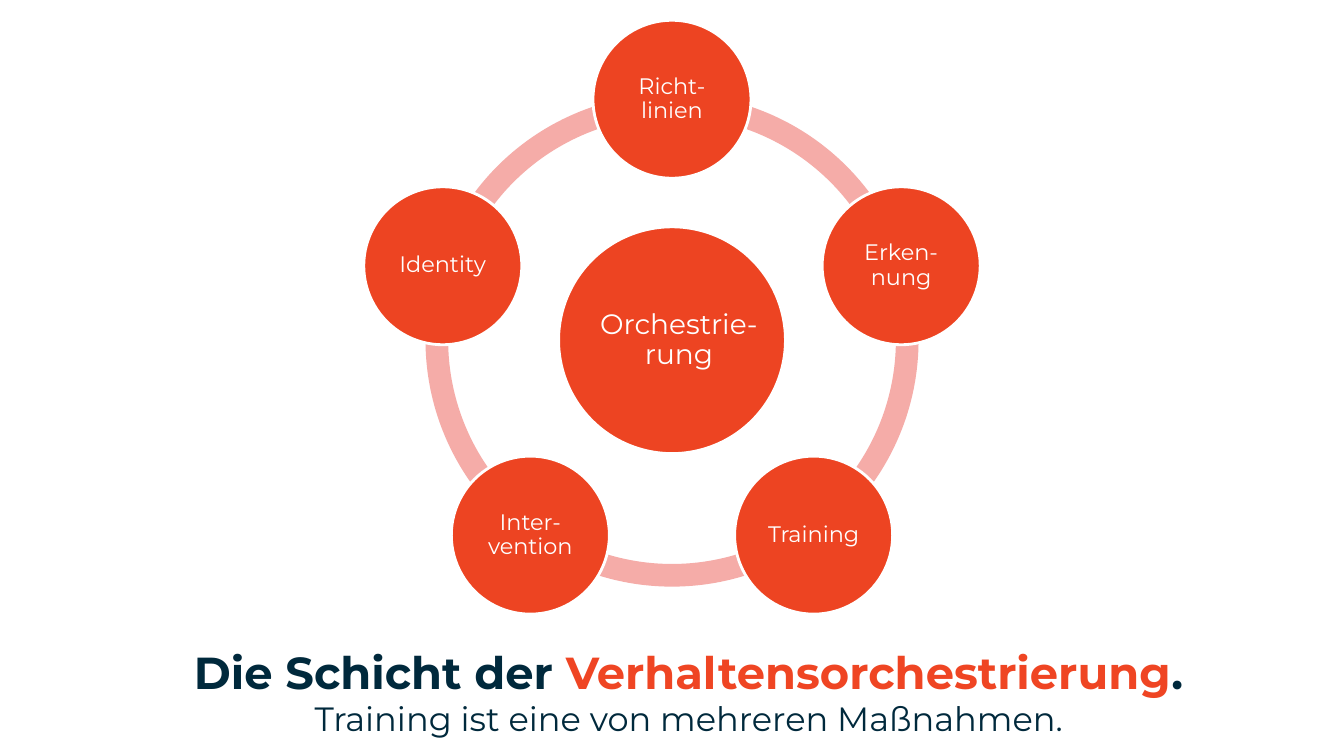
"""Build the slide showing five measures in a ring around orchestration."""
from dataclasses import dataclass
from math import cos, radians, sin

from pptx import Presentation
from pptx.dml.color import RGBColor
from pptx.enum.shapes import MSO_SHAPE
from pptx.enum.text import MSO_ANCHOR, PP_ALIGN
from pptx.util import Inches, Pt

ARC, DISC = MSO_SHAPE.BLOCK_ARC, MSO_SHAPE.OVAL
MID, CENTER = MSO_ANCHOR.MIDDLE, PP_ALIGN.CENTER
WIDE, HIGH = Inches(13.33), Inches(7.5)
FONT = "Montserrat"
HEX = {"navy": "00293C", "accent": "EF4523", "disc": "ED4422",
       "ring": "F5ACA8", "white": "FFFFFF"}
HUB_Y, ORBIT, RING, BAND = 45, 31.87, 65.2, 0.046
NAMES = [["Richt-", "linien"], ["Erken-", "nung"], ["Training"],
         ["Inter-", "vention"], ["Identity"]]
STEP = 360 / len(NAMES)


@dataclass
class Run:
    """A piece of text with its look."""
    text: str
    size: float
    color: str
    bold: bool = False


@dataclass
class Node:
    """A labelled disc; lengths are percent of the slide height from the hub."""
    lines: list[str]
    size: float
    font: float
    label: tuple[float, float]
    x: float = 0
    y: float = 0
    shift: float = 0
    inset: float = 0


def part(share: float) -> int:
    """Turn a percentage of the slide height into a length."""
    return round(HIGH * share / 100)


def frame(x: float, y: float, wide: float, high: float) -> tuple[int, ...]:
    """Give the box centred at an offset from the hub."""
    return (WIDE // 2 + part(x - wide / 2), part(HUB_Y + y - high / 2),
            part(wide), part(high))


def color(name: str) -> RGBColor:
    """Look up a named colour."""
    return RGBColor.from_string(HEX[name])


def write(slide, box: tuple[int, ...], rows: list[list[Run]],
          inset: float = 0, space: float = 1, indent: float = 0) -> None:
    """Draw centred paragraphs run by run in a text box."""
    text = slide.shapes.add_textbox(*box).text_frame
    text.word_wrap, text.vertical_anchor = True, MID
    text.margin_left = text.margin_right = Inches(inset)
    text.margin_top = text.margin_bottom = Inches(inset)
    for i, row in enumerate(rows):
        para = text.add_paragraph() if i else text.paragraphs[0]
        para.alignment, para.line_spacing = CENTER, space
        if indent:
            props = para._p.get_or_add_pPr()
            props.set("marL", str(Inches(2 * indent)))
            props.set("indent", str(-Inches(indent)))
        for item in row:
            run = para.add_run()
            run.text = item.text
            run.font.name, run.font.size = FONT, Pt(item.size)
            run.font.bold = item.bold
            run.font.color.rgb = color(item.color)


def shape(slide, kind: MSO_SHAPE, box: tuple[int, ...], fill: str):
    """Draw a flat shape without an outline."""
    item = slide.shapes.add_shape(kind, *box)
    item.shadow.inherit = False
    item.fill.solid()
    item.fill.fore_color.rgb = color(fill)
    item.line.fill.background()
    return item


def arc(slide, start: float) -> None:
    """Draw one ring segment, clockwise from an angle in degrees."""
    item = shape(slide, ARC, frame(0, 0, RING, RING), "ring")
    ends = start % 360, (start + STEP) % 360
    for i, angle in enumerate(ends):
        item.adjustments[i] = angle * 0.6
    item.adjustments[2] = BAND


def disc(slide, node: Node) -> None:
    """Draw a disc and its label."""
    box = frame(node.x, node.y, node.size, node.size)
    item = shape(slide, DISC, box, "disc")
    item.line.color.rgb = color("white")
    item.line.width = Pt(2)
    rows = [[Run(line, node.font, "white")] for line in node.lines]
    write(slide, frame(node.x + node.shift, node.y, *node.label), rows,
          node.inset, 0.9)


def main() -> None:
    """Build and save the slide."""
    deck = Presentation()
    deck.slide_width, deck.slide_height = WIDE, HIGH
    slide = deck.slides.add_slide(deck.slide_layouts[6])
    title = [[Run("Die Schicht der ", 32, "navy", True),
              Run("Verhaltensorchestrierung", 32, "accent", True),
              Run(".", 32, "navy", True)],
             [Run("Training ist eine von mehreren Maßnahmen.", 24, "navy")]]
    write(slide, (0, part(85.2), WIDE, part(12.53)), title, indent=0.33)
    turns = [STEP * i - 90 for i in range(len(NAMES))]
    for turn in reversed(turns):
        arc(slide, turn)
    disc(slide, Node(["Orchestrie-", "rung"], 30, 20, (24.4, 21.2), shift=0.93))
    for lines, turn in zip(NAMES, turns):
        angle = radians(turn)
        disc(slide, Node(lines, 20.9, 16, (14.8, 14.8), ORBIT * cos(angle),
                         ORBIT * sin(angle), inset=0.02))
    deck.save("out.pptx")


if __name__ == "__main__":
    main()
